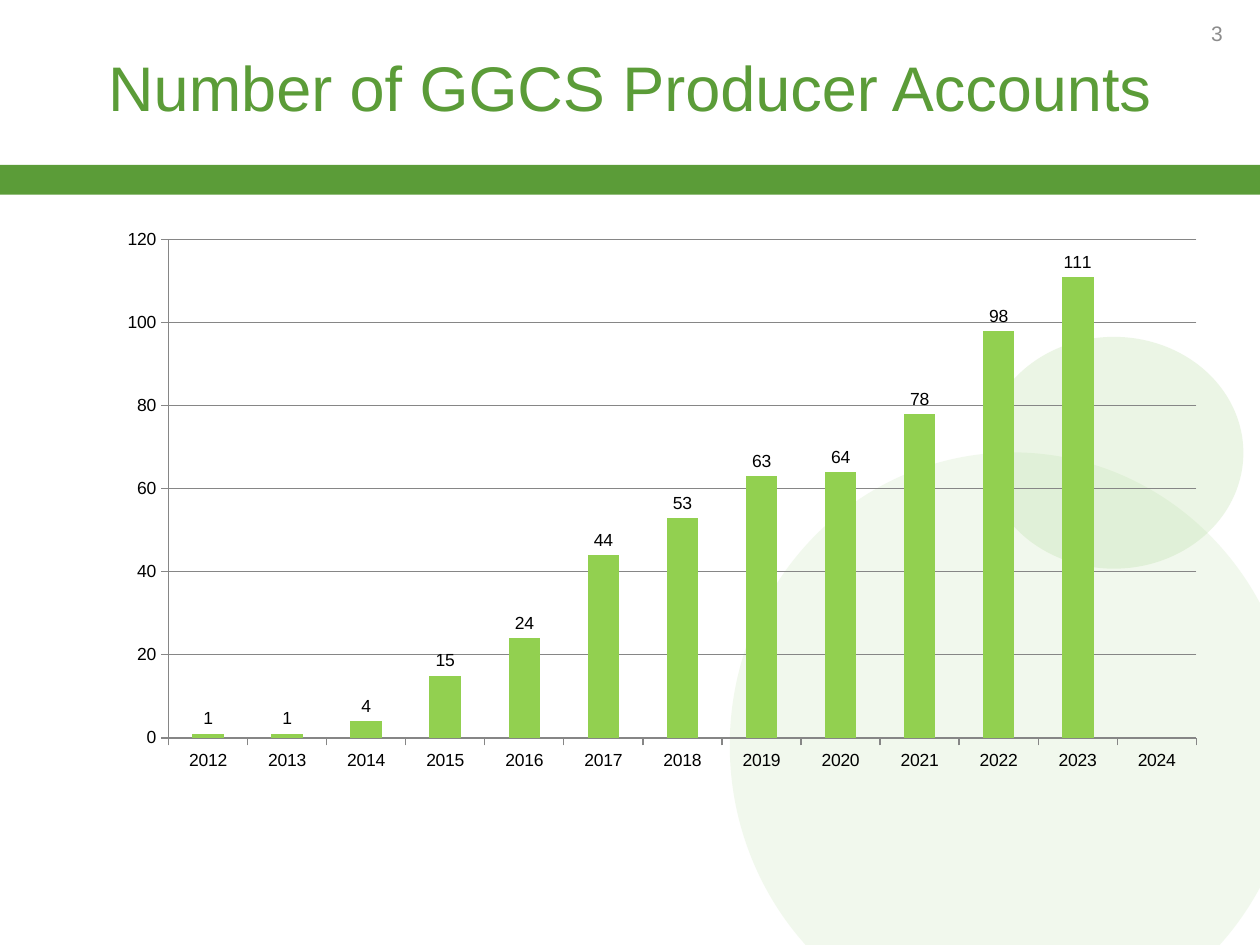
from lxml import etree
from pptx import Presentation
from pptx.chart.data import CategoryChartData
from pptx.dml.color import RGBColor
from pptx.enum.chart import XL_CHART_TYPE, XL_LABEL_POSITION, XL_TICK_MARK
from pptx.enum.shapes import MSO_SHAPE
from pptx.enum.text import MSO_ANCHOR, PP_ALIGN
from pptx.oxml.ns import qn
from pptx.util import Pt

COLUMNS = XL_CHART_TYPE.COLUMN_CLUSTERED
LABEL_ABOVE = XL_LABEL_POSITION.OUTSIDE_END
TICK_OUT, TICK_NONE = XL_TICK_MARK.OUTSIDE, XL_TICK_MARK.NONE
ELLIPSE, RECTANGLE = MSO_SHAPE.OVAL, MSO_SHAPE.RECTANGLE
MIDDLE = MSO_ANCHOR.MIDDLE
CENTER, RIGHT = PP_ALIGN.CENTER, PP_ALIGN.RIGHT

FONT = "Arial"
COLORS = {
    "green": "5B9C38",
    "bubble": "B3DC9C",
    "column": "92D050",
    "axis": "868686",
    "number": "8C8C8C",
    "label": "000000",
}
YEARS = [str(year) for year in range(2012, 2025)]
ACCOUNTS = [1, 1, 4, 15, 24, 44, 53, 63, 64, 78, 98, 111, None]


def rgb(name):
    return RGBColor.from_string(COLORS[name])


def style_font(font, size, color):
    font.name = FONT
    font.size = Pt(size)
    font.color.rgb = rgb(color)


def add_plain_shape(slide, kind, box, color, opacity=100):
    shape = slide.shapes.add_shape(kind, *map(Pt, box))
    shape.shadow.inherit = False
    shape.fill.solid()
    shape.fill.fore_color.rgb = rgb(color)
    shape.line.fill.background()
    if opacity < 100:
        fill_color = shape.fill._xPr.find(".//" + qn("a:srgbClr"))
        etree.SubElement(fill_color, qn("a:alpha"), val=str(opacity * 1000))


def add_backdrop(slide, width):
    add_plain_shape(slide, ELLIPSE, (417, 258.5, 323.3, 334.8), "bubble", 18)
    add_plain_shape(slide, RECTANGLE, (0, 94.3, width, 17), "green")
    add_plain_shape(slide, ELLIPSE, (562.5, 192.5, 148, 132.5), "bubble", 26)


def add_line_of_text(slide, box, text, size, color, align):
    frame = slide.shapes.add_textbox(*map(Pt, box)).text_frame
    frame.word_wrap = True
    frame.vertical_anchor = MIDDLE
    paragraph = frame.paragraphs[0]
    paragraph.text = text
    paragraph.alignment = align
    style_font(paragraph.font, size, color)


def set_inner_plot(chart, **fractions):
    """Fix the plot area inside the axes, as fractions of the chart."""
    plot_area = chart._chartSpace.chart.plotArea
    for old_layout in plot_area.findall(qn("c:layout")):
        plot_area.remove(old_layout)
    layout = etree.Element(qn("c:layout"))
    plot_area.insert(0, layout)
    manual = etree.SubElement(layout, qn("c:manualLayout"))
    settings = {"layoutTarget": "inner", "xMode": "edge", "yMode": "edge", **fractions}
    for tag, value in settings.items():
        etree.SubElement(manual, qn(f"c:{tag}"), val=str(value))


def style_line(line, width):
    line.color.rgb = rgb("axis")
    line.width = Pt(width)


def add_accounts_chart(slide, box):
    data = CategoryChartData()
    data.categories = YEARS
    data.add_series("Series 1", ACCOUNTS)
    chart = slide.shapes.add_chart(COLUMNS, *map(Pt, box), data).chart
    chart.has_legend = False
    chart.has_title = False
    style_font(chart.font, 10, "label")
    set_inner_plot(chart, x=0.081, y=0.029, w=0.919, h=0.856)

    for axis in (chart.category_axis, chart.value_axis):
        axis.major_tick_mark = TICK_OUT
        axis.minor_tick_mark = TICK_NONE
        style_line(axis.format.line, 0.75)
    values = chart.value_axis
    values.minimum_scale, values.maximum_scale, values.major_unit = 0, 120, 20
    values.has_major_gridlines = True
    style_line(values.major_gridlines.format.line, 0.75)

    plot = chart.plots[0]
    plot.gap_width = 150
    plot.vary_by_categories = False
    columns = plot.series[0]
    columns.format.fill.solid()
    columns.format.fill.fore_color.rgb = rgb("column")
    labels = columns.data_labels
    labels.show_value = True
    labels.position = LABEL_ABOVE
    style_font(labels.font, 10, "label")


def main():
    width, height = 720, 540
    presentation = Presentation()
    presentation.slide_width, presentation.slide_height = Pt(width), Pt(height)
    slide = presentation.slides.add_slide(presentation.slide_layouts[6])
    add_backdrop(slide, width)
    add_line_of_text(slide, (36, 4.5, 648, 90), "Number of GGCS Producer Accounts",
                     36, "green", CENTER)
    add_line_of_text(slide, (538, 4.5, 167.8, 28.8), "3", 12, "number", RIGHT)
    add_accounts_chart(slide, (44.6, 127.4, 639.4, 332.6))
    presentation.save("out.pptx")


if __name__ == "__main__":
    main()
